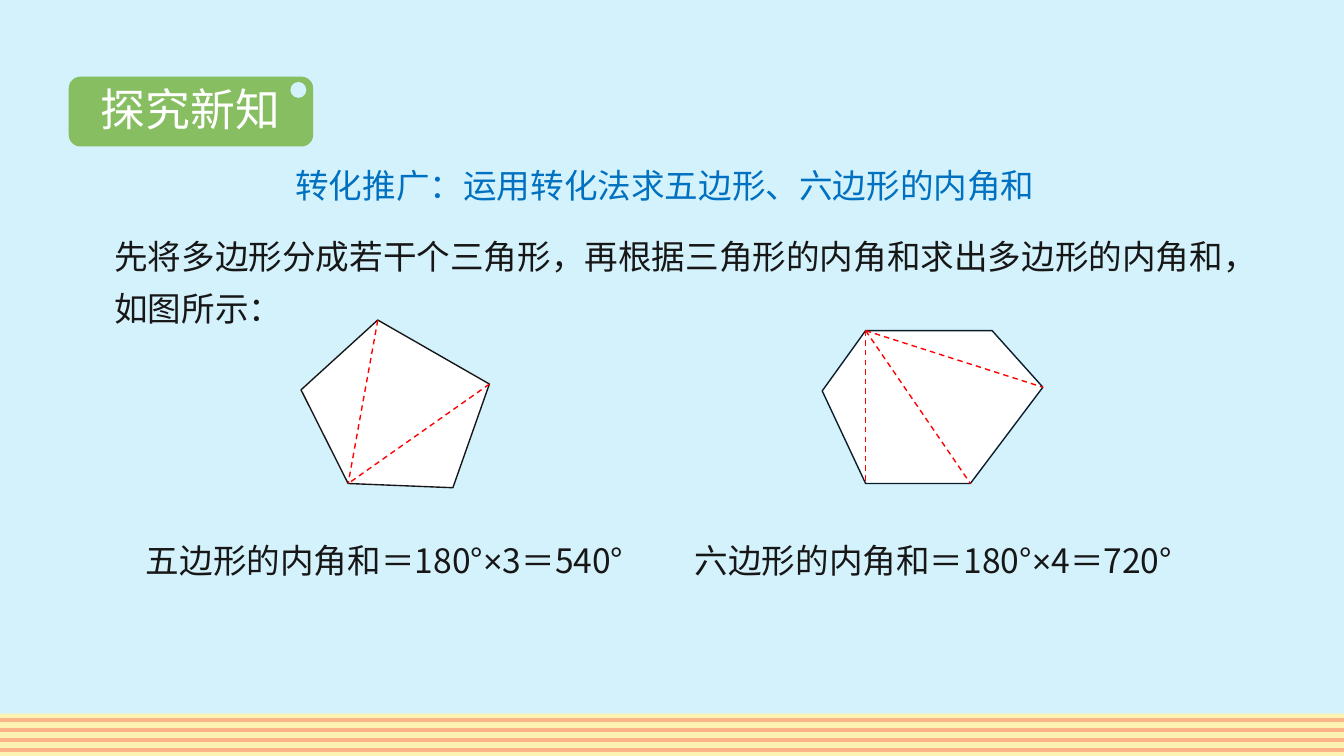
"""Build a lesson slide on the interior angle sums of pentagons and hexagons."""
from dataclasses import dataclass

from lxml.etree import SubElement
from pptx import Presentation
from pptx.dml.color import RGBColor
from pptx.enum.dml import MSO_LINE
from pptx.enum.shapes import MSO_CONNECTOR, MSO_SHAPE
from pptx.enum.text import MSO_ANCHOR, PP_ALIGN
from pptx.oxml.ns import qn
from pptx.shapes.autoshape import Shape
from pptx.shapes.shapetree import SlideShapes
from pptx.text.text import Font
from pptx.util import Cm, Pt

SKY = RGBColor(0xD4, 0xF2, 0xFC)
CREAM = RGBColor(0xFC, 0xF3, 0xB2)
ORANGE = RGBColor(0xFB, 0xB4, 0x88)
GREEN = RGBColor(0x87, 0xBE, 0x62)
WHITE = RGBColor(0xFF, 0xFF, 0xFF)
BLUE = RGBColor(0x00, 0x70, 0xC0)
INK = RGBColor(0x18, 0x17, 0x17)
NAVY = RGBColor(0x0B, 0x1C, 0x2C)
RED = RGBColor(0xFF, 0x00, 0x00)

HAN_FONT = "Noto Sans CJK SC"
SYMBOL_FONT = "Arial"
WIDTH, HEIGHT = 25.4, 14.29
BAND_TOP = 13.49
STRIPE_TOP, STRIPE_STEP, STRIPE_COUNT = 13.61, 0.19, 4

Point = tuple[float, float]
Box = tuple[float, float, float, float]


@dataclass(frozen=True)
class Polygon:
    vertices: list[Point]
    diagonals: list[tuple[int, int]]
    outline: RGBColor


@dataclass(frozen=True)
class AngleSum:
    left: float
    polygon_name: str
    triangles: int


POLYGONS = [
    Polygon(
        [(8.56, 9.22), (6.58, 9.14), (5.69, 7.37), (7.14, 6.05), (9.25, 7.26)],
        [(3, 1), (4, 1)],
        INK,
    ),
    Polygon(
        [(15.54, 7.39), (16.36, 6.25), (18.75, 6.25),
         (19.71, 7.32), (18.34, 9.14), (16.36, 9.14)],
        [(1, 5), (1, 4), (1, 3)],
        NAVY,
    ),
]
ANGLE_SUMS = [AngleSum(2.51, "五边形", 3), AngleSum(12.88, "六边形", 4)]


def set_typeface(font: Font, typeface: str) -> None:
    font.name = typeface
    SubElement(font._rPr, qn("a:ea")).set("typeface", typeface)


def add_block(shapes: SlideShapes, kind: MSO_SHAPE, box: Box, color: RGBColor) -> Shape:
    block = shapes.add_shape(kind, *map(Cm, box))
    block.shadow.inherit = False
    block.fill.solid()
    block.fill.fore_color.rgb = color
    block.line.fill.background()
    return block


def add_segment(shapes: SlideShapes, start: Point, end: Point, color: RGBColor,
                weight: float, dash: MSO_LINE | None = None) -> None:
    segment = shapes.add_connector(MSO_CONNECTOR.STRAIGHT, *map(Cm, start + end))
    SubElement(segment._element.spPr, qn("a:effectLst"))
    segment.line.color.rgb = color
    segment.line.width = Pt(weight)
    segment.line.dash_style = dash


def add_text(shapes: SlideShapes, box: Box, text: str, color: RGBColor,
             size: int = 18, wrap: bool = True) -> Shape:
    label = shapes.add_textbox(*map(Cm, box))
    label.text_frame.word_wrap = wrap
    paragraph = label.text_frame.paragraphs[0]
    if text:
        paragraph.add_run().text = text
        set_typeface(paragraph.font, HAN_FONT)
    paragraph.font.size = Pt(size)
    paragraph.font.color.rgb = color
    return label


def add_polygon(shapes: SlideShapes, polygon: Polygon) -> None:
    first, *rest = [(Cm(x), Cm(y)) for x, y in polygon.vertices]
    builder = shapes.build_freeform(*first)
    builder.add_line_segments(rest, close=True)
    outline = builder.convert_to_shape()
    outline.shadow.inherit = False
    outline.fill.solid()
    outline.fill.fore_color.rgb = WHITE
    outline.line.color.rgb = polygon.outline
    outline.line.width = Pt(0.75)
    for start, end in polygon.diagonals:
        add_segment(shapes, polygon.vertices[start], polygon.vertices[end],
                    RED, 0.75, MSO_LINE.DASH)


def add_angle_sum(shapes: SlideShapes, item: AngleSum) -> None:
    label = add_text(shapes, (item.left, 10.08, 9.98, 1.02), "", INK)
    paragraph = label.text_frame.paragraphs[0]
    parts = [f"{item.polygon_name}的内角和", "＝", "180", "°", "×",
             str(item.triangles), "＝", str(180 * item.triangles), "°"]
    for part in parts:
        run = paragraph.add_run()
        run.text = part
        set_typeface(run.font, SYMBOL_FONT if part in "＝×" else HAN_FONT)
        if part == "°":
            run.font._rPr.set("spc", "-820")


def add_backdrop(shapes: SlideShapes) -> None:
    add_block(shapes, MSO_SHAPE.RECTANGLE, (0, 0, WIDTH, HEIGHT), SKY)
    add_block(shapes, MSO_SHAPE.RECTANGLE,
              (0, BAND_TOP, WIDTH, HEIGHT - BAND_TOP), CREAM)
    for index in range(STRIPE_COUNT):
        y = STRIPE_TOP + index * STRIPE_STEP
        add_segment(shapes, (0, y), (WIDTH, y), ORANGE, 2.25)


def add_badge(shapes: SlideShapes) -> None:
    add_block(shapes, MSO_SHAPE.ROUNDED_RECTANGLE, (1.3, 1.45, 4.62, 1.32), GREEN)
    add_block(shapes, MSO_SHAPE.OVAL, (5.49, 1.55, 0.3, 0.3), SKY)
    heading = add_text(shapes, (1.63, 1.42, 3.94, 1.27), "探究新知", WHITE, 24, False)
    heading.text_frame.paragraphs[0].alignment = PP_ALIGN.CENTER


def add_intro(shapes: SlideShapes) -> None:
    intro = add_text(
        shapes, (1.98, 4.19, 21.46, 2.06),
        "先将多边形分成若干个三角形，再根据三角形的内角和求出多边形的内角和，如图所示：",
        INK,
    )
    frame = intro.text_frame
    frame.vertical_anchor = MSO_ANCHOR.MIDDLE
    frame.margin_left = frame.margin_right = Cm(0.18)
    frame.margin_top = frame.margin_bottom = Cm(0.1)
    frame.paragraphs[0].line_spacing = 1.3


def main() -> None:
    presentation = Presentation()
    presentation.slide_width = Cm(WIDTH)
    presentation.slide_height = Cm(HEIGHT)
    shapes = presentation.slides.add_slide(presentation.slide_layouts[6]).shapes
    add_backdrop(shapes)
    add_text(shapes, (5.33, 3, 14.73, 1.02),
             "转化推广：运用转化法求五边形、六边形的内角和", BLUE)
    add_intro(shapes)
    add_badge(shapes)
    for item in ANGLE_SUMS:
        add_angle_sum(shapes, item)
    for polygon in POLYGONS:
        add_polygon(shapes, polygon)
    presentation.save("out.pptx")


if __name__ == "__main__":
    main()
